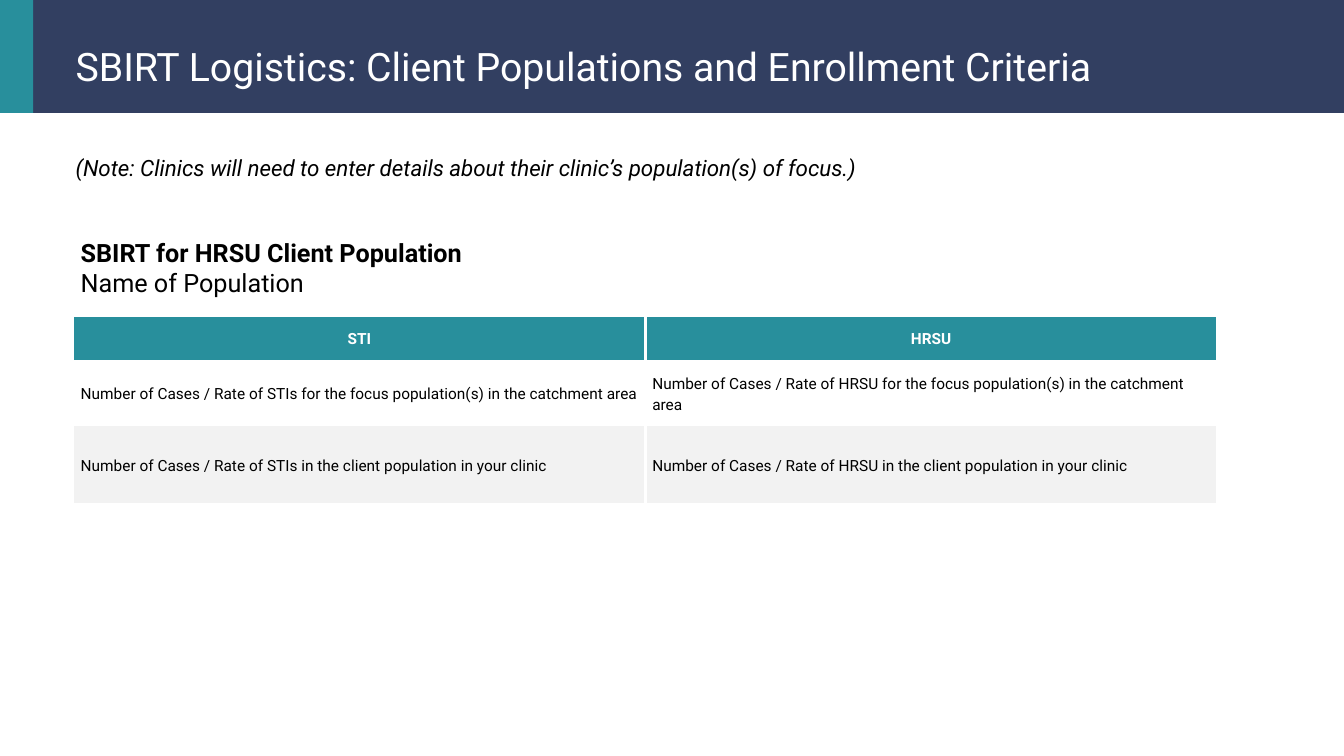
from lxml import etree
from pptx import Presentation
from pptx.dml.color import RGBColor
from pptx.enum.shapes import MSO_SHAPE
from pptx.enum.text import MSO_ANCHOR, PP_ALIGN
from pptx.oxml.ns import qn
from pptx.util import Inches, Pt

RECTANGLE = MSO_SHAPE.RECTANGLE
TOP, MIDDLE = MSO_ANCHOR.TOP, MSO_ANCHOR.MIDDLE
LEFT, CENTER = PP_ALIGN.LEFT, PP_ALIGN.CENTER

# Content
TITLE = "SBIRT Logistics: Client Populations and Enrollment Criteria"
NOTE = "(Note: Clinics will need to enter details about their clinic’s population(s) of focus.)"
POPULATION = ["SBIRT for HRSU Client Population", "Name of Population"]
TOPICS = ["STI", "HRSU"]
MEASURES = [
    ["Number of Cases / Rate of STIs for the focus population(s) in the catchment area",
     "Number of Cases / Rate of HRSU for the focus population(s) in the catchment area"],
    ["Number of Cases / Rate of STIs in the client population in your clinic",
     "Number of Cases / Rate of HRSU in the client population in your clinic"],
]

# Look
FONT = "Roboto"
COLORS = {"navy": "323F61", "teal": "288F9C", "white": "FFFFFF",
          "black": "000000", "gray": "F2F2F2"}
SLIDE_W, SLIDE_H = 13.33, 7.5
HEADER_H, ACCENT_W = 1.12, 0.33
TABLE_LEFT, TABLE_TOP, COLUMN_W = 0.73, 2.21, 5.67
ROW_HEIGHTS = [0.92, 0.45, 0.64, 0.78]
ROW_FILLS = ["white", "teal", "white", "gray"]


def color(name):
    return RGBColor.from_string(COLORS[name])


def write(frame, *lines, size, ink="black", bold_lines=0, italic=False,
          align=LEFT, line_spacing=None):
    """Write lines as one paragraph; the first bold_lines of them are bold."""
    paragraph = frame.paragraphs[0]
    paragraph.alignment = align
    paragraph.space_before = Pt(0)
    paragraph.line_spacing = line_spacing or 1.0
    for number, line in enumerate(lines):
        if number:
            paragraph.add_line_break()
        run = paragraph.add_run()
        run.text = line
        run.font.name = FONT
        run.font.size = Pt(size)
        run.font.bold = number < bold_lines
        run.font.italic = italic
        run.font.color.rgb = color(ink)
    return paragraph


def place(placeholder, left, top, width, height):
    placeholder.left, placeholder.top = Inches(left), Inches(top)
    placeholder.width, placeholder.height = Inches(width), Inches(height)
    frame = placeholder.text_frame
    frame.word_wrap = True
    frame.vertical_anchor = TOP
    frame.margin_left = frame.margin_right = Inches(0.1)
    frame.margin_top = frame.margin_bottom = Inches(0.05)
    return frame


def set_borders(cell, **widths):
    properties = cell._tc.get_or_add_tcPr()
    for index, (side, width) in enumerate(widths.items()):
        line = etree.Element(qn(f"a:ln{side}"), w=str(Pt(width)))
        fill = etree.SubElement(line, qn("a:solidFill"))
        etree.SubElement(fill, qn("a:srgbClr"), val=COLORS["white"])
        properties.insert(index, line)


prs = Presentation()
prs.slide_width, prs.slide_height = Inches(SLIDE_W), Inches(SLIDE_H)
slide = prs.slides.add_slide(prs.slide_layouts[1])
title, note = slide.placeholders

# Header band and accent, behind the title
header = [(ACCENT_W, SLIDE_W - ACCENT_W, "navy"), (0, ACCENT_W, "teal")]
for depth, (left, width, fill) in enumerate(header, start=2):
    band = slide.shapes.add_shape(RECTANGLE, Inches(left), 0, Inches(width), Inches(HEADER_H))
    band.shadow.inherit = False
    band.fill.solid()
    band.fill.fore_color.rgb = color(fill)
    band.line.fill.background()
    slide.shapes.element.insert(depth, band.element)

# Title and note
write(place(title, 0.65, 0.37, 12.36, 0.57), TITLE, size=28, ink="white")
note_line = write(place(note, 0.65, 1.48, 12.01, 0.37), NOTE, size=16, italic=True)
note_format = note_line._p.get_or_add_pPr()
note_format.set("marL", "0")
note_format.set("indent", "0")
etree.SubElement(note_format, qn("a:buNone"))

# Population table
table = slide.shapes.add_table(
    len(ROW_HEIGHTS), len(TOPICS), Inches(TABLE_LEFT), Inches(TABLE_TOP),
    Inches(COLUMN_W * len(TOPICS)), Inches(sum(ROW_HEIGHTS))).table
for column in table.columns:
    column.width = Inches(COLUMN_W)
for r, (height, fill) in enumerate(zip(ROW_HEIGHTS, ROW_FILLS)):
    table.rows[r].height = Inches(height)
    for c, cell in enumerate(table.rows[r].cells):
        cell.fill.solid()
        cell.fill.fore_color.rgb = color(fill)
        cell.vertical_anchor = MIDDLE
        cell.margin_left = cell.margin_right = Inches(0.07)
        cell.margin_top = cell.margin_bottom = 0
        set_borders(cell, L=2.25 if c else 1, R=2.25,
                    T=3 if r == 1 else 1, B=1 if r else 3)

population = table.cell(0, 0)
population.merge(table.cell(0, len(TOPICS) - 1))
write(population.text_frame, *POPULATION, size=18, bold_lines=1)
for c, topic in enumerate(TOPICS):
    write(table.cell(1, c).text_frame, topic, size=11, ink="white", bold_lines=1,
          align=CENTER, line_spacing=Pt(15))
for r, measures in enumerate(MEASURES, start=2):
    for c, measure in enumerate(measures):
        write(table.cell(r, c).text_frame, measure, size=11, line_spacing=Pt(15))

prs.save("out.pptx")
